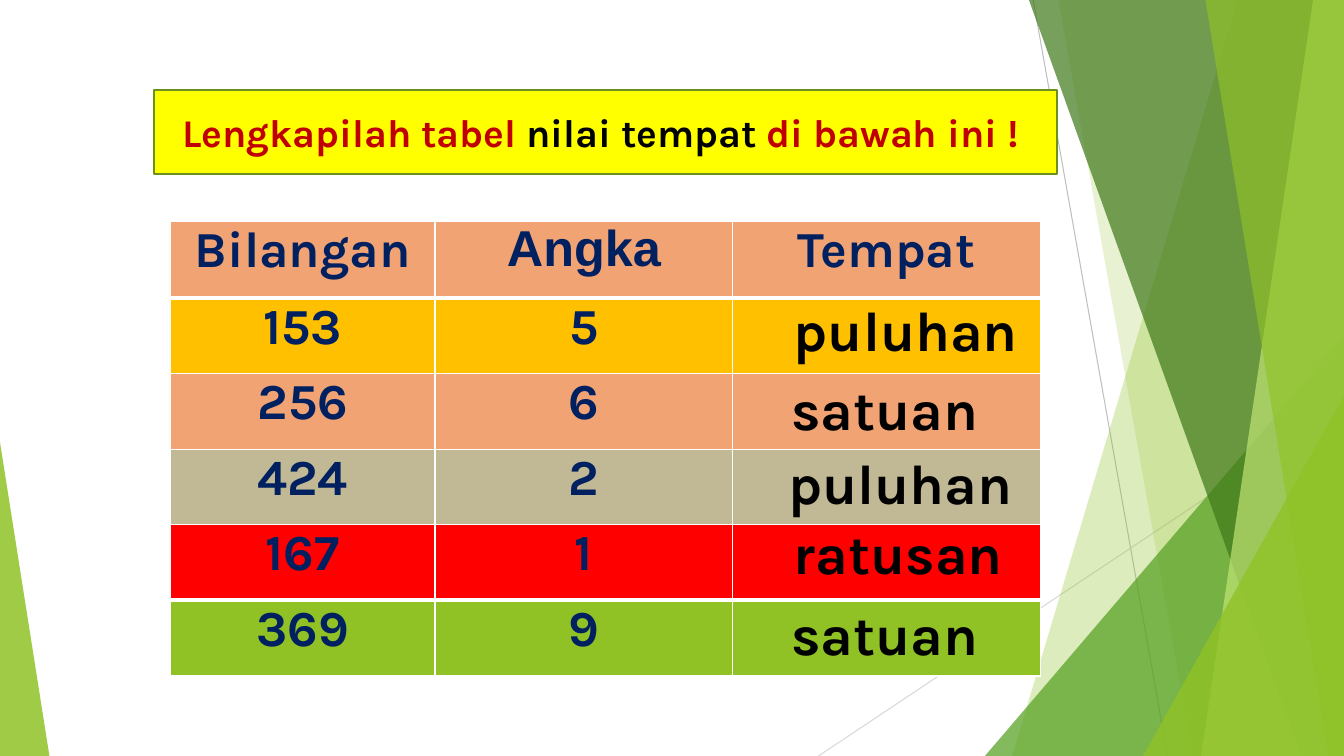
from lxml import etree
from pptx import Presentation
from pptx.dml.color import RGBColor
from pptx.enum.shapes import MSO_CONNECTOR, MSO_SHAPE
from pptx.enum.text import MSO_ANCHOR, MSO_AUTO_SIZE, PP_ALIGN
from pptx.oxml.ns import qn
from pptx.util import Pt

STRAIGHT = MSO_CONNECTOR.STRAIGHT
TRIANGLE = MSO_SHAPE.ISOSCELES_TRIANGLE
CENTER = PP_ALIGN.CENTER
TOP, MIDDLE = MSO_ANCHOR.TOP, MSO_ANCHOR.MIDDLE
NO_FIT, GROW = MSO_AUTO_SIZE.NONE, MSO_AUTO_SIZE.SHAPE_TO_FIT_TEXT
TITLE_ONLY = 5
WIDTH, HEIGHT = 960, 540
FONT = "Karla"

COLORS = {
    "lime": "90C226", "green": "54A021", "forest": "3F7819", "pale": "C0E474",
    "gray": "BFBFBF", "silver": "D9D9D9", "white": "FFFFFF", "black": "000000",
    "yellow": "FFFF00", "olive": "6B901C", "crimson": "C00000", "navy": "002060",
    "salmon": "F1A374", "amber": "FFC000", "khaki": "C1B995", "red": "FF0000",
}


def rgb(color):
    return RGBColor.from_string(COLORS[color])


class SlideBuilder:
    def __init__(self, slide):
        self.slide = slide
        self.shapes = slide.shapes

    def style_run(self, run, size, color, font=FONT):
        run.font.size = Pt(size)
        run.font.name = font
        run.font.bold = True
        run.font.color.rgb = rgb(color)

    def paint(self, shape, color, opacity):
        shape.shadow.inherit = False
        shape.fill.solid()
        shape.fill.fore_color.rgb = rgb(color)
        shape.line.fill.background()
        srgb = shape._element.spPr.find(f"{qn('a:solidFill')}/{qn('a:srgbClr')}")
        etree.SubElement(srgb, qn("a:alpha"), val=str(opacity * 1000))

    def line(self, x1, y1, x2, y2, color):
        connector = self.shapes.add_connector(STRAIGHT, Pt(x1), Pt(y1), Pt(x2), Pt(y2))
        connector.line.color.rgb = rgb(color)
        connector.line.width = Pt(0.75)
        etree.SubElement(connector._element.spPr, qn("a:effectLst"))

    def band(self, top_left, bottom_left, color, opacity):
        """Facet running from its slanted left side to the right slide edge."""
        outline = self.shapes.build_freeform(Pt(top_left), 0, scale=1.0)
        outline.add_line_segments(
            [(Pt(WIDTH), 0), (Pt(WIDTH), Pt(HEIGHT)), (Pt(bottom_left), Pt(HEIGHT))])
        self.paint(outline.convert_to_shape(), color, opacity)

    def corner(self, left, top, width, apex, color, opacity):
        """Right triangle standing on the bottom slide edge."""
        triangle = self.shapes.add_shape(
            TRIANGLE, Pt(left), Pt(top), Pt(width), Pt(HEIGHT - top))
        triangle.adjustments[0] = apex
        self.paint(triangle, color, opacity)

    def banner(self, left, top, width, height, parts):
        title = self.shapes.title
        title.left, title.top, title.width, title.height = map(Pt, (left, top, width, height))
        geometry = etree.SubElement(title._element.spPr, qn("a:prstGeom"), prst="roundRect")
        etree.SubElement(geometry, qn("a:avLst"))
        title.fill.solid()
        title.fill.fore_color.rgb = rgb("yellow")
        title.line.color.rgb = rgb("olive")
        title.line.width = Pt(1.5)
        frame = title.text_frame
        frame.word_wrap = True
        frame.auto_size = NO_FIT
        frame.vertical_anchor = MIDDLE
        paragraph = frame.paragraphs[0]
        paragraph.alignment = CENTER
        for wording, color in parts:
            run = paragraph.add_run()
            run.text = wording
            self.style_run(run, 28, color)
        self.shapes._spTree.append(title._element)  # bring in front of the facets

    def borders(self, cell, top, bottom):
        properties = cell._tc.get_or_add_tcPr()
        sides = (("a:lnL", 1), ("a:lnR", 1), ("a:lnT", top), ("a:lnB", bottom))
        for position, (side, width) in enumerate(sides):
            border = etree.Element(qn(side), w=str(Pt(width)))
            fill = etree.SubElement(border, qn("a:solidFill"))
            etree.SubElement(fill, qn("a:srgbClr"), val=COLORS["white"])
            properties.insert(position, border)

    def table(self, left, top, widths, heights, rows, fills, thick_rules):
        grid = self.shapes.add_table(
            len(rows), len(widths), Pt(left), Pt(top), Pt(sum(widths)), Pt(sum(heights))).table
        grid.horz_banding = False
        for column, width in zip(grid.columns, widths):
            column.width = Pt(width)
        for r, (row, height, fill) in enumerate(zip(rows, heights, fills)):
            grid.rows[r].height = Pt(height)
            for c, wording in enumerate(row):
                cell = grid.cell(r, c)
                cell.fill.solid()
                cell.fill.fore_color.rgb = rgb(fill)
                cell.vertical_anchor = TOP
                cell.margin_left = cell.margin_right = 0
                cell.margin_top = cell.margin_bottom = 0
                self.borders(cell, *(3 if rule in thick_rules else 1 for rule in (r, r + 1)))
                if wording:
                    paragraph = cell.text_frame.paragraphs[0]
                    paragraph.text = wording
                    paragraph.alignment = CENTER
                    paragraph.space_before = Pt(3.4)
                    font = "Arial" if wording == "Angka" else FONT
                    self.style_run(paragraph.runs[0], 36, "navy", font)

    def answer(self, left, top, width, wording):
        box = self.shapes.add_textbox(Pt(left), Pt(top), Pt(width), Pt(55.4))
        frame = box.text_frame
        frame.word_wrap = True
        frame.auto_size = GROW
        frame.text = wording
        self.style_run(frame.paragraphs[0].runs[0], 40, "black")


def main():
    deck = Presentation()
    deck.slide_width, deck.slide_height = Pt(WIDTH), Pt(HEIGHT)
    page = SlideBuilder(deck.slides.add_slide(deck.slide_layouts[TITLE_ONLY]))

    # Background facets
    page.line(738, 0, 834, HEIGHT, "gray")
    page.line(WIDTH, 290, 584.6, HEIGHT, "silver")
    page.band(884, 723, "lime", 30)
    page.band(756, 852, "lime", 20)
    page.corner(703.5, 240, 256.5, 1, "green", 72)
    page.band(735, 929.5, "forest", 70)
    page.band(938, 858, "pale", 70)
    page.band(861, 949, "lime", 65)
    page.corner(816.5, 283, 143.5, 1, "lime", 80)
    page.corner(0, 316, 35.3, 0, "lime", 85)

    # Place value table
    place_values = [
        ("Bilangan", "Angka", "Tempat"),
        ("153", "5", ""),
        ("256", "6", ""),
        ("424", "2", ""),
        ("167", "1", ""),
        ("369", "9", ""),
    ]
    row_fills = ["salmon", "amber", "salmon", "khaki", "red", "lime"]
    page.table(121.8, 157.8, [188.9, 212.8, 219.6], [55] + [54] * 5,
               place_values, row_fills, thick_rules=(1, 5))

    # Instruction banner
    page.banner(110.2, 64.1, 644.6, 60.4, [
        ("Lengkapilah tabel ", "crimson"),
        ("nilai tempat ", "black"),
        ("di bawah ini ! ", "crimson"),
    ])

    # Answers over the last column
    answers = [
        (560, 207.4, 174, "puluhan"),
        (558, 264.2, 151, "satuan"),
        (556, 316.8, 187, "puluhan"),
        (560, 367.2, 176, "ratusan"),
        (558, 424.8, 151, "satuan"),
    ]
    for left, top, width, wording in answers:
        page.answer(left, top, width, wording)

    deck.save("out.pptx")


if __name__ == "__main__":
    main()
